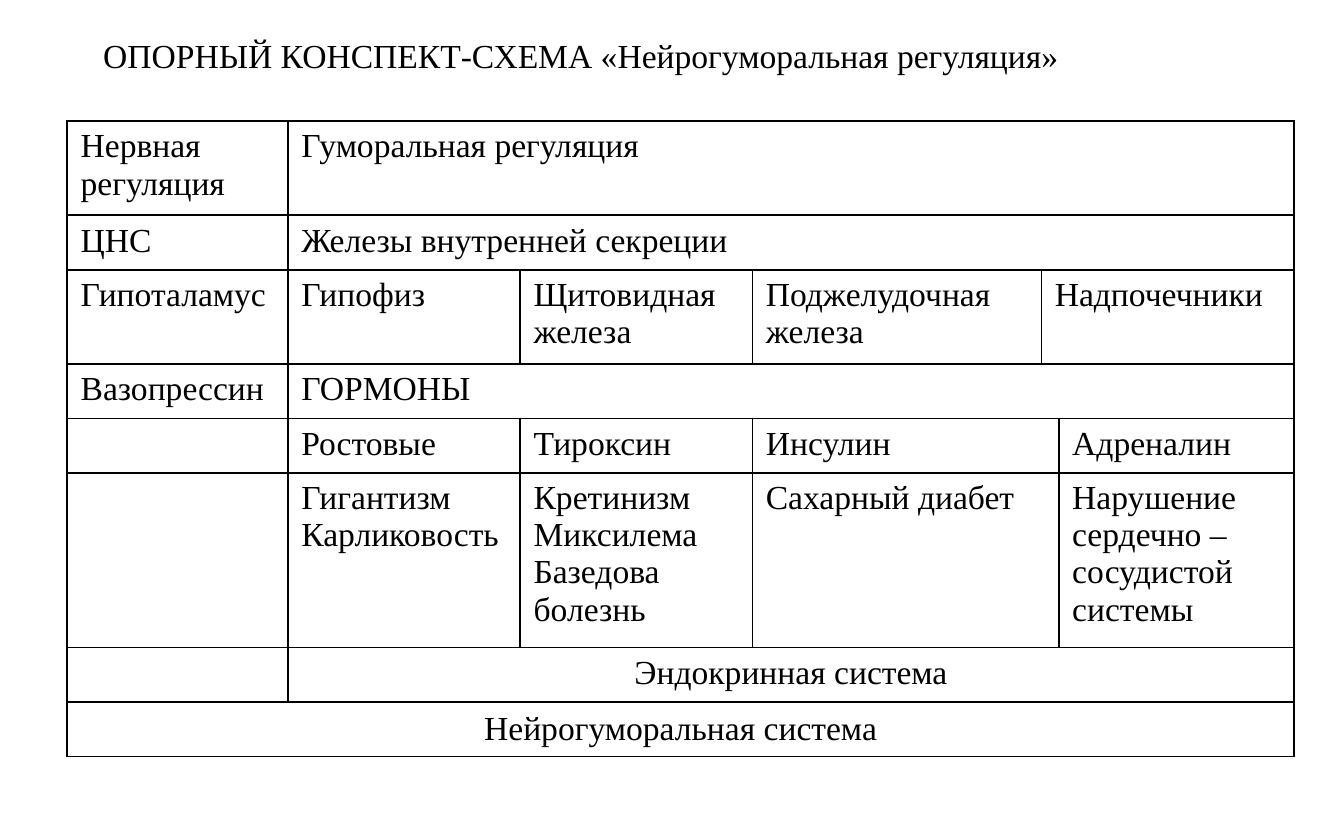
"""Build a one-slide summary table on neurohumoral regulation."""
import dataclasses
import typing

import lxml.etree
import pptx
import pptx.dml.color
import pptx.enum.text
import pptx.oxml.ns
import pptx.util

Cm = pptx.util.Cm
Align = pptx.enum.text.PP_ALIGN
Anchor = pptx.enum.text.MSO_ANCHOR


@dataclasses.dataclass(frozen=True)
class Theme:
    face: str = "Times New Roman"
    size: float = 18
    ink: str = "000000"
    line: float = 1


@dataclasses.dataclass(frozen=True)
class Entry:
    row: int
    col: int
    text: str
    span: int = 1
    align: Align = Align.LEFT
    anchor: Anchor = Anchor.TOP


THEME = Theme()
FONT = {"name": THEME.face, "size": pptx.util.Pt(THEME.size), "bold": False}
FLAGS = {"first_row": False, "horz_banding": False}
WIDTHS = (4.17, 4.39, 4.39, 5.46, 0.33, 4.45)
SHORT, MID, TALL = 1.03, 1.78, 3.3
HEIGHTS = (MID, SHORT, MID, SHORT, SHORT, TALL, SHORT, SHORT)
ENTRIES = (
    Entry(0, 0, "Нервная регуляция"),
    Entry(0, 1, "Гуморальная регуляция", 5),
    Entry(1, 0, "ЦНС"),
    Entry(1, 1, "Железы внутренней секреции", 5),
    Entry(2, 0, "Гипоталамус"),
    Entry(2, 1, "Гипофиз"),
    Entry(2, 2, "Щитовидная железа"),
    Entry(2, 3, "Поджелудочная железа"),
    Entry(2, 4, "Надпочечники", 2),
    Entry(3, 0, "Вазопрессин"),
    Entry(3, 1, "ГОРМОНЫ", 5),
    Entry(4, 1, "Ростовые"),
    Entry(4, 2, "Тироксин"),
    Entry(4, 3, "Инсулин", 2),
    Entry(4, 5, "Адреналин"),
    Entry(5, 1, "Гигантизм\nКарликовость"),
    Entry(5, 2, "Кретинизм\nМиксилема\nБазедова болезнь"),
    Entry(5, 3, "Сахарный диабет", 2),
    Entry(5, 5, "Нарушение сердечно –сосудистой системы"),
    Entry(6, 1, "Эндокринная система", 5, Align.CENTER),
    Entry(7, 0, "Нейрогуморальная система", 6, Align.CENTER, Anchor.MIDDLE),
)


def apply(item: typing.Any, values: dict[str, typing.Any]) -> None:
    for key, value in values.items():
        setattr(item, key, value)


def write(frame: typing.Any, text: str, align: Align = Align.LEFT) -> None:
    frame.text = text
    for para in frame.paragraphs:
        para.alignment = align
        for run in para.runs:
            apply(run.font, FONT)
            run.font.color.rgb = pptx.dml.color.RGBColor.from_string(THEME.ink)


def border(cell: typing.Any) -> None:
    cell.fill.background()
    props = cell._tc.get_or_add_tcPr()
    for spot, side in enumerate("LRTB"):
        line = lxml.etree.Element(pptx.oxml.ns.qn(f"a:ln{side}"))
        line.set("w", str(pptx.util.Pt(THEME.line)))
        fill = lxml.etree.SubElement(line, pptx.oxml.ns.qn("a:solidFill"))
        tint = lxml.etree.SubElement(fill, pptx.oxml.ns.qn("a:srgbClr"))
        tint.set("val", THEME.ink)
        props.insert(spot, line)


def place(table: typing.Any, entry: Entry) -> None:
    cell = table.cell(entry.row, entry.col)
    if entry.span > 1:
        cell.merge(table.cell(entry.row, entry.col + entry.span - 1))
    cell.vertical_anchor = entry.anchor
    write(cell.text_frame, entry.text, entry.align)


def add_title(slide: typing.Any) -> None:
    box = slide.shapes.add_textbox(Cm(1.7), Cm(0.53), Cm(20.52), Cm(1.02))
    write(box.text_frame, "ОПОРНЫЙ КОНСПЕКТ-СХЕМА «Нейрогуморальная регуляция»")
    apply(box.text_frame, {
        "word_wrap": True,
        "auto_size": pptx.enum.text.MSO_AUTO_SIZE.SHAPE_TO_FIT_TEXT,
    })


def add_grid(slide: typing.Any) -> None:
    table = slide.shapes.add_table(
        len(HEIGHTS), len(WIDTHS), Cm(1.27), Cm(2.29),
        Cm(sum(WIDTHS)), Cm(sum(HEIGHTS)),
    ).table
    apply(table, FLAGS)
    for col, width in zip(table.columns, WIDTHS):
        col.width = Cm(width)
    for row, height in zip(table.rows, HEIGHTS):
        row.height = Cm(height)
    for cell in table.iter_cells():
        border(cell)
    for entry in ENTRIES:
        place(table, entry)


def main() -> None:
    deck = pptx.Presentation()
    apply(deck, {"slide_width": Cm(25.4), "slide_height": Cm(15.88)})
    slide = deck.slides.add_slide(deck.slide_layouts[6])
    add_title(slide)
    add_grid(slide)
    deck.save("out.pptx")


if __name__ == "__main__":
    main()
